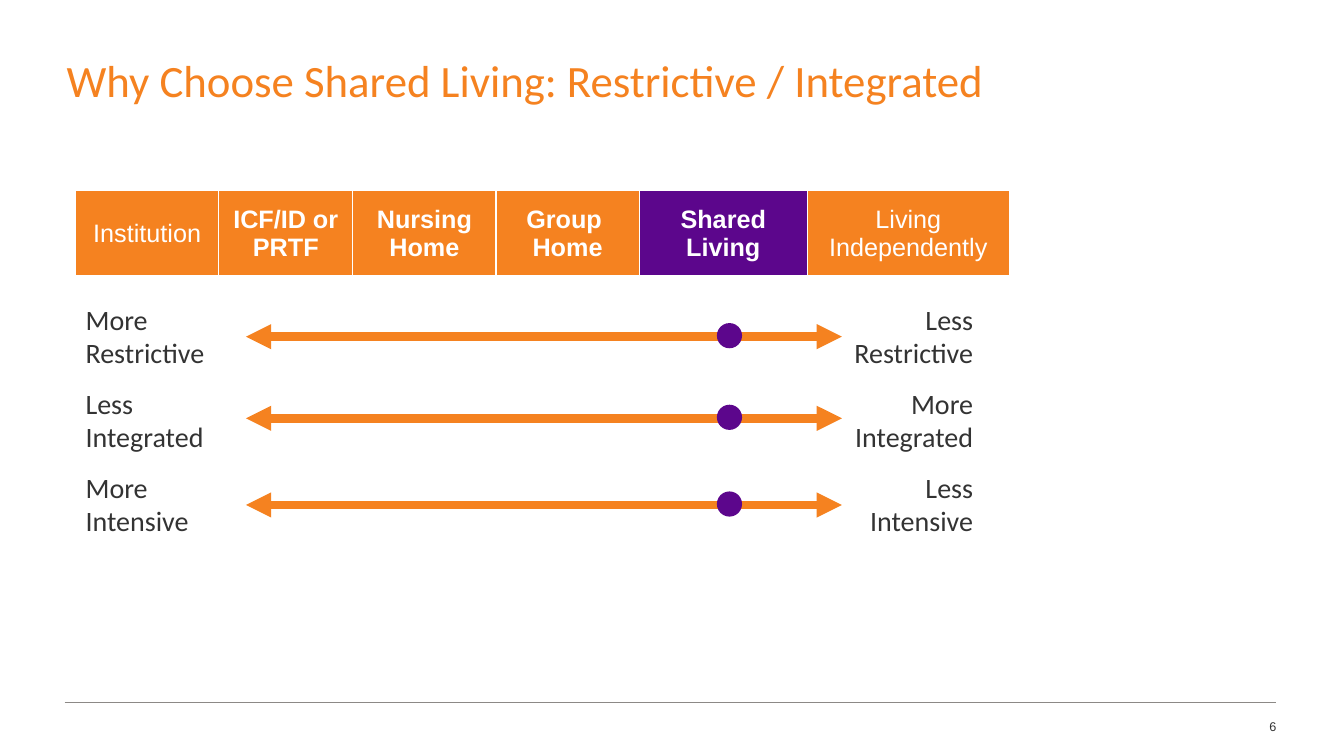
from pptx import Presentation
from pptx.dml.color import RGBColor
from pptx.enum.shapes import MSO_CONNECTOR, MSO_SHAPE
from pptx.enum.text import MSO_ANCHOR, PP_ALIGN
from pptx.oxml.ns import qn
from pptx.util import Inches, Pt
from lxml import etree

LEFT, CENTER, RIGHT = PP_ALIGN.LEFT, PP_ALIGN.CENTER, PP_ALIGN.RIGHT
MIDDLE = MSO_ANCHOR.MIDDLE
STRAIGHT, OVAL = MSO_CONNECTOR.STRAIGHT, MSO_SHAPE.OVAL

WIDTH, HEIGHT = 13.33, 7.5
ORANGE, PURPLE, GREY, RULE, WHITE = "F58220", "5C068C", "333333", "8C8986", "FFFFFF"

# Settings: label, column width, bold, fill
SETTINGS = [
    ("Institution", 1.42, False, ORANGE),
    ("ICF/ID or\nPRTF", 1.33, True, ORANGE),
    ("Nursing\nHome", 1.42, True, ORANGE),
    ("Group \nHome", 1.42, True, ORANGE),
    ("Shared\nLiving", 1.67, True, PURPLE),
    ("Living Independently", 2, False, ORANGE),
]
# Scales: left end, right end, arrow height within the region
SCALES = [
    ("More Restrictive", "Less Restrictive", 0.39),
    ("Less Integrated", "More Integrated", 1.2),
    ("More Intensive", "Less Intensive", 2.06),
]


def color(hex_string):
    return RGBColor.from_string(hex_string)


def style_font(font, name, size, hex_string, bold=False):
    values = {"name": name, "size": Pt(size), "bold": bold}
    for key, value in values.items():
        setattr(font, key, value)
    font.color.rgb = color(hex_string)


def add_text(page, box, lines, name, size, hex_string, align=LEFT, inset=(0, 0), gap=0, spacing=None):
    frame = page.shapes.add_textbox(*map(Inches, box)).text_frame
    frame.word_wrap = True
    across, down = map(Inches, inset)
    margins = {"margin_left": across, "margin_right": across,
               "margin_top": down, "margin_bottom": down}
    for key, value in margins.items():
        setattr(frame, key, value)
    frame.text = "\n".join(lines)
    for index, para in enumerate(frame.paragraphs):
        para.alignment = align
        para.line_spacing = spacing
        if index:
            para.space_before = Pt(gap)
        style_font(para.runs[0].font, name, size, hex_string)


def add_line(page, start, end, hex_string, width, arrows=False):
    line = page.shapes.add_connector(STRAIGHT, *map(Inches, (*start, *end)))
    line.line.color.rgb = color(hex_string)
    line.line.width = Pt(width)
    if arrows:
        for tag in ("a:headEnd", "a:tailEnd"):
            etree.SubElement(line.line._get_or_add_ln(), qn(tag), type="triangle")
    etree.SubElement(line._element.spPr, qn("a:effectLst"))


def add_border(cell, side, width):
    border = etree.SubElement(cell._tc.get_or_add_tcPr(), qn(f"a:ln{side}"), w=str(Pt(width)))
    fill = etree.SubElement(border, qn("a:solidFill"))
    etree.SubElement(fill, qn("a:srgbClr"), val=WHITE)


def add_settings(page, left, top, height):
    total = sum(setting[1] for setting in SETTINGS)
    box = map(Inches, (left, top, total, height))
    table = page.shapes.add_table(1, len(SETTINGS), *box).table
    table.horz_banding = False
    for index, (label, width, bold, fill) in enumerate(SETTINGS):
        table.columns[index].width = Inches(width)
        cell = table.cell(0, index)
        for side, thickness in (("L", 1), ("R", 1), ("T", 1), ("B", 3)):
            add_border(cell, side, thickness)
        cell.fill.solid()
        cell.fill.fore_color.rgb = color(fill)
        cell.vertical_anchor = MIDDLE
        cell.text_frame.text = label
        for para in cell.text_frame.paragraphs:
            para.alignment = CENTER
            style_font(para.runs[0].font, "Arial", 18, WHITE, bold)


def add_scales(page, left, top, width, height):
    label_width, dot = 1.52, 0.25
    arrow_left, arrow_right, dot_left = left + 1.69, left + 7.6, left + 6.36
    lefts, rights, offsets = zip(*SCALES)

    # End labels
    for x, labels, align in ((left, lefts, LEFT), (left + width - label_width, rights, RIGHT)):
        add_text(page, (x, top, label_width, height), labels, "Calibri", 20, GREY,
                 align, inset=(0.1, 0.05), gap=12)

    # Arrows, with a marker below Shared Living
    for offset in offsets:
        y = top + offset
        add_line(page, (arrow_left, y), (arrow_right, y), ORANGE, 6, arrows=True)
        marker = page.shapes.add_shape(
            OVAL, *map(Inches, (dot_left, y - 0.01 - dot / 2, dot, dot)))
        marker.shadow.inherit = False
        marker.fill.solid()
        marker.fill.fore_color.rgb = color(PURPLE)
        marker.line.fill.background()


def add_footer(page, left, right, top):
    add_line(page, (left, top), (right, top), RULE, 0.75)
    add_text(page, (right - 3, top + 0.16, 3, 0.25), ["6"], "Arial", 9, GREY, RIGHT)


def main():
    deck = Presentation()
    deck.slide_width, deck.slide_height = Inches(WIDTH), Inches(HEIGHT)
    page = deck.slides.add_slide(deck.slide_layouts[6])
    add_footer(page, 0.64, 12.66, 6.97)
    add_text(page, (0.66, 0.58, 12.01, 1.1),
             ["Why Choose Shared Living: Restrictive / Integrated"],
             "Calibri", 32, ORANGE, spacing=0.9)
    add_settings(page, 0.75, 1.89, 0.86)
    add_scales(page, 0.75, 2.95, 9, 2.63)
    deck.save("out.pptx")


if __name__ == "__main__":
    main()
